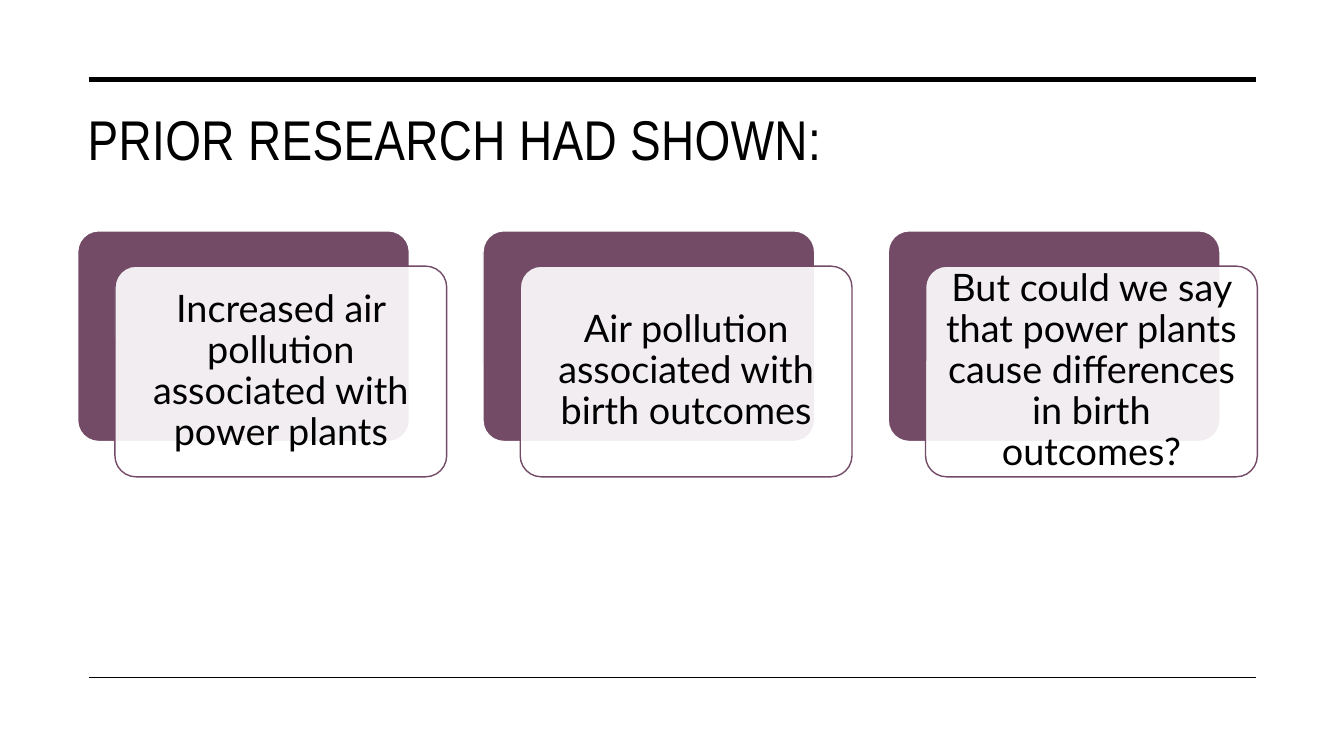
from pptx import Presentation
from pptx.dml.color import RGBColor
from pptx.enum.shapes import MSO_CONNECTOR, MSO_SHAPE
from pptx.enum.text import MSO_ANCHOR, MSO_AUTO_SIZE, PP_ALIGN
from pptx.oxml.ns import qn
from pptx.util import Inches, Pt
from lxml.etree import SubElement

HEADING = "PRIOR RESEARCH HAD SHOWN:"
FINDINGS = [
    "Increased air pollution associated with power plants",
    "Air pollution associated with birth outcomes",
    "But could we say that power plants cause differences in birth outcomes?",
]
RULES = [(0.79, 3.5), (6.72, 1)]  # height on the slide, line width

PLUM, WHITE, BLACK = "734B67", "FFFFFF", "000000"
RULE_LEFT, RULE_RIGHT = 0.88, 12.46
CARD_LEFT, CARD_TOP, CARD_PITCH = 0.77, 2.29, 4.02
CARD_WIDTH, CARD_HEIGHT = 3.29, 2.09
PANEL_SHIFT_X, PANEL_SHIFT_Y = 0.37, 0.35


def rgb(color):
    return RGBColor.from_string(color)


def write(shape, text, size, font, align, anchor, inset_x, inset_y,
          line_spacing=1.0, tracking=0):
    frame = shape.text_frame
    frame.word_wrap = True
    frame.auto_size = MSO_AUTO_SIZE.NONE
    frame.vertical_anchor = anchor
    frame.margin_left = frame.margin_right = Inches(inset_x)
    frame.margin_top = frame.margin_bottom = Inches(inset_y)
    paragraph = frame.paragraphs[0]
    paragraph.alignment = align
    paragraph.line_spacing = line_spacing
    paragraph.space_before = Pt(0)
    run = paragraph.add_run()
    run.text = text
    run.font.size = Pt(size)
    run.font.name = font
    run.font.color.rgb = rgb(BLACK)
    if tracking:
        run.font._element.set("spc", str(round(tracking * 100)))


def add_rule(slide, y, width):
    rule = slide.shapes.add_connector(
        MSO_CONNECTOR.STRAIGHT,
        Inches(RULE_LEFT), Inches(y), Inches(RULE_RIGHT), Inches(y))
    rule.line.color.rgb = rgb(BLACK)
    rule.line.width = Pt(width)
    SubElement(rule._element.spPr, qn("a:effectLst"))


def add_card(slide, left, top, fill, outline, opacity=100):
    card = slide.shapes.add_shape(
        MSO_SHAPE.ROUNDED_RECTANGLE,
        Inches(left), Inches(top), Inches(CARD_WIDTH), Inches(CARD_HEIGHT))
    card.adjustments[0] = 0.1
    card.shadow.inherit = False
    card.fill.solid()
    card.fill.fore_color.rgb = rgb(fill)
    if opacity < 100:
        fill_color = card._element.spPr.find(qn("a:solidFill"))[0]
        SubElement(fill_color, qn("a:alpha"), val=str(opacity * 1000))
    card.line.color.rgb = rgb(outline)
    card.line.width = Pt(1)
    return card


def main():
    deck = Presentation()
    deck.slide_width, deck.slide_height = Inches(13.33), Inches(7.5)
    slide = deck.slides.add_slide(deck.slide_layouts[5])

    title = slide.shapes.title
    title.left, title.top = Inches(0.77), Inches(0.99)
    title.width, title.height = Inches(11.69), Inches(1.26)
    write(title, HEADING, size=40, font="Arial Narrow", align=PP_ALIGN.LEFT,
          anchor=MSO_ANCHOR.TOP, inset_x=0.1, inset_y=0.05, tracking=0.3)

    for y, width in RULES:
        add_rule(slide, y, width)

    for column, finding in enumerate(FINDINGS):
        left = CARD_LEFT + column * CARD_PITCH
        add_card(slide, left, CARD_TOP, PLUM, WHITE)
        panel = add_card(slide, left + PANEL_SHIFT_X, CARD_TOP + PANEL_SHIFT_Y,
                         WHITE, PLUM, opacity=90)
        write(panel, finding, size=27, font="Lato", align=PP_ALIGN.CENTER,
              anchor=MSO_ANCHOR.MIDDLE, inset_x=0.11, inset_y=0.11,
              line_spacing=0.9)

    deck.save("out.pptx")


if __name__ == "__main__":
    main()
